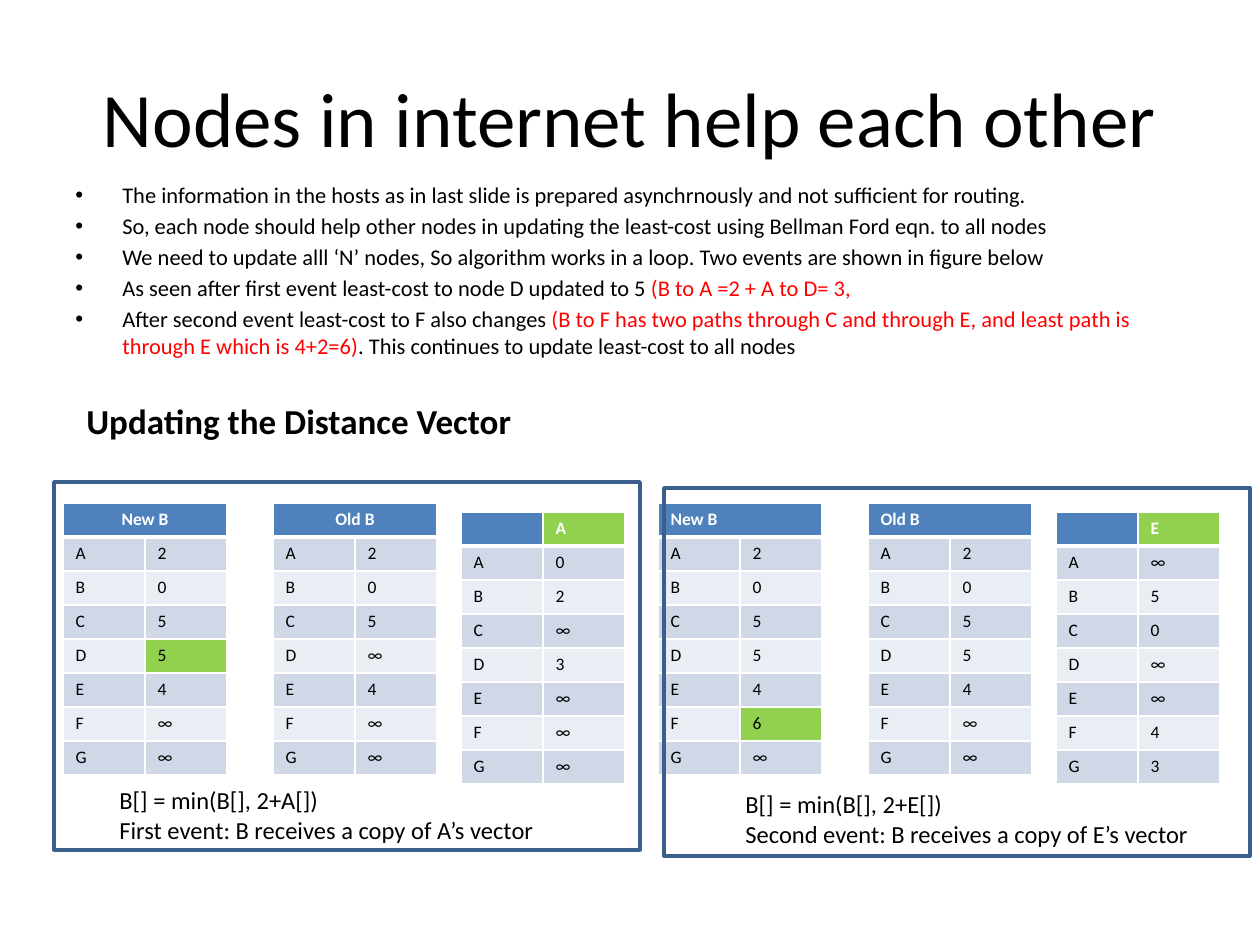
import dataclasses

import pptx
import pptx.util
import pptx.dml.color
import pptx.enum.shapes
import pptx.enum.text
import pptx.oxml
import pptx.oxml.ns
from lxml import etree

SCALE = 914400 / 126
FONT = "Calibri"
NODES = "ABCDEFG"
STEP = 595  # from a table of the first event to its peer in the second
ROW, COL = 34, 82
COLOR = {
    "text": "000000", "note": "FF0000", "white": "FFFFFF", "head": "4F81BD",
    "odd": "D0D8E8", "even": "E9EDF4", "mark": "92D050", "frame": "3A5F8C",
}
ALIGN = pptx.enum.text.PP_ALIGN
ANCHOR = pptx.enum.text.MSO_ANCHOR


@dataclasses.dataclass
class Box:
    x: int
    y: int
    w: int
    h: int

    def emu(self) -> list[int]:
        return [px(n) for n in (self.x, self.y, self.w, self.h)]


@dataclasses.dataclass
class Grid:
    """A distance vector; a wide head spans both columns."""
    x: int
    y: int
    head: str
    costs: str
    wide: bool = True
    mark: str = ""


@dataclasses.dataclass
class Event:
    grids: list[Grid]
    frame: Box
    note: Box
    lines: list[str]
    wrap: bool
    align: ALIGN


def px(n: int) -> int:
    return round(n * SCALE)


def rgb(name: str) -> pptx.dml.color.RGBColor:
    return pptx.dml.color.RGBColor.from_string(COLOR[name])


def tag(name: str) -> str:
    return pptx.oxml.ns.qn("a:" + name)


def write(frame, paras: list, size: float, color: str = "text", bold: bool = False,
          align: ALIGN = ALIGN.LEFT, before: float = 0, bullet: bool = False) -> None:
    """Fill a text frame; a paragraph is a string or a list of (text, color)."""
    for i, para in enumerate(paras):
        p = frame.paragraphs[0] if i == 0 else frame.add_paragraph()
        p.alignment = align
        p.space_before = pptx.util.Pt(before)
        if bullet:
            ppr = p._p.get_or_add_pPr()
            ppr.set("marL", str(px(47)))
            ppr.set("indent", str(px(-47)))
            etree.SubElement(ppr, tag("buFont"), typeface="Arial")
            etree.SubElement(ppr, tag("buChar"), char="•")
        if not para:
            etree.SubElement(p._p, tag("endParaRPr"), sz=str(round(size * 100)))
            continue
        for text, hue in [(para, color)] if isinstance(para, str) else para:
            run = p.add_run()
            run.text = text
            run.font.name = FONT
            run.font.size = pptx.util.Pt(size)
            run.font.bold = bold
            run.font.color.rgb = rgb(hue)


def label(slide, box: Box, paras: list, wrap: bool = True, **form) -> None:
    frame = slide.shapes.add_textbox(*box.emu()).text_frame
    frame.word_wrap = wrap
    write(frame, paras, **form)


def edge(cell, base: int) -> None:
    """Give a cell white borders, with its bottom one base points wide."""
    tcpr = cell._tc.get_or_add_tcPr()
    for side in ("lnL", "lnR", "lnT", "lnB"):
        width = base if side == "lnB" else 1
        line = etree.SubElement(tcpr, tag(side), w=str(pptx.util.Pt(width)))
        fill = etree.SubElement(line, tag("solidFill"))
        etree.SubElement(fill, tag("srgbClr"), val=COLOR["white"])


def draw_grid(slide, grid: Grid, align: ALIGN) -> None:
    rows = [(grid.head, "") if grid.wide else ("", grid.head)]
    rows += zip(NODES, grid.costs.split())
    box = Box(grid.x, grid.y, 2 * COL, ROW * len(rows))
    table = slide.shapes.add_table(len(rows), 2, *box.emu()).table
    for r, row in enumerate(rows):
        table.rows[r].height = px(ROW)
        for c, text in enumerate(row):
            cell = table.cell(r, c)
            edge(cell, 3 if r == 0 else 1)
            tone = "head" if r == 0 else "odd" if r % 2 else "even"
            if c and row[0] == grid.mark:
                tone = "mark"
            cell.fill.solid()
            cell.fill.fore_color.rgb = rgb(tone)
            top = r == 0
            write(cell.text_frame, [text], size=10, bold=top,
                  color="white" if top else "text",
                  align=align if top and grid.wide else ALIGN.LEFT)
    if grid.wide:
        table.cell(0, 0).merge(table.cell(0, 1))


def draw_frame(slide, box: Box) -> None:
    rect = slide.shapes.add_shape(pptx.enum.shapes.MSO_SHAPE.RECTANGLE, *box.emu())
    rect.shadow.inherit = False
    rect.fill.background()
    rect.line.color.rgb = rgb("frame")
    rect.line.width = pptx.util.Pt(2)


POINTS = [
    "The information in the hosts as in last slide is prepared asynchrnously and not "
    "sufficient for routing.",
    "So, each node should help other nodes in updating the least-cost using Bellman Ford "
    "eqn. to all nodes",
    "We need to update alll ‘N’ nodes, So algorithm works in a loop. Two events are shown "
    "in figure below",
    [("As seen after first event least-cost to node D updated to 5 ", "text"),
     ("(B to A =2 + A to D= 3,", "note")],
    [("After second event least-cost to F also changes", "text"),
     (" (B to F has two paths through C and through E, and least path is through E "
      "which is 4+2=6)", "note"),
     (". This continues to update least-cost to all nodes", "text")],
]
EVENTS = [
    Event([Grid(63, 503, "New B", "2 0 5 5 4 ∞ ∞", mark="D"),
           Grid(273, 503, "Old B", "2 0 5 ∞ 4 ∞ ∞"),
           Grid(461, 512, "A", "0 2 ∞ 3 ∞ ∞ ∞", wide=False)],
          Box(54, 482, 586, 368), Box(107, 779, 444, 72),
          ["B[] = min(B[], 2+A[])", "First event: B receives a copy of A’s vector"],
          False, ALIGN.CENTER),
    Event([Grid(63 + STEP, 503, "New B", "2 0 5 5 4 6 ∞", mark="F"),
           Grid(273 + STEP, 503, "Old B", "2 0 5 5 4 ∞ ∞"),
           Grid(461 + STEP, 512, "E", "∞ 5 0 ∞ ∞ 4 3", wide=False)],
          Box(664, 488, 586, 368), Box(733, 783, 473, 72),
          ["B[] = min(B[], 2+E[])", "Second event: B receives a copy of E’s vector"],
          True, ALIGN.LEFT),
]


def main() -> None:
    deck = pptx.Presentation()
    deck.slide_width, deck.slide_height = px(1260), px(945)
    slide = deck.slides.add_slide(deck.slide_layouts[5])
    title = slide.shapes.title
    title.left, title.top, title.width, title.height = Box(63, 38, 1134, 158).emu()
    title.text_frame.vertical_anchor = ANCHOR.MIDDLE
    write(title.text_frame, ["Nodes in internet help each other"], size=44,
          align=ALIGN.CENTER)
    label(slide, Box(63, 175, 1134, 213), POINTS, size=12.8, before=2.3, bullet=True)
    for event in EVENTS:
        for grid in event.grids:
            draw_grid(slide, grid, event.align)
        label(slide, event.note, event.lines, wrap=event.wrap, size=14)
    for event in EVENTS:
        draw_frame(slide, event.frame)
    label(slide, Box(74, 393, 814, 55), ["Updating the Distance Vector"], size=20, bold=True)
    deck.save("out.pptx")


if __name__ == "__main__":
    main()
